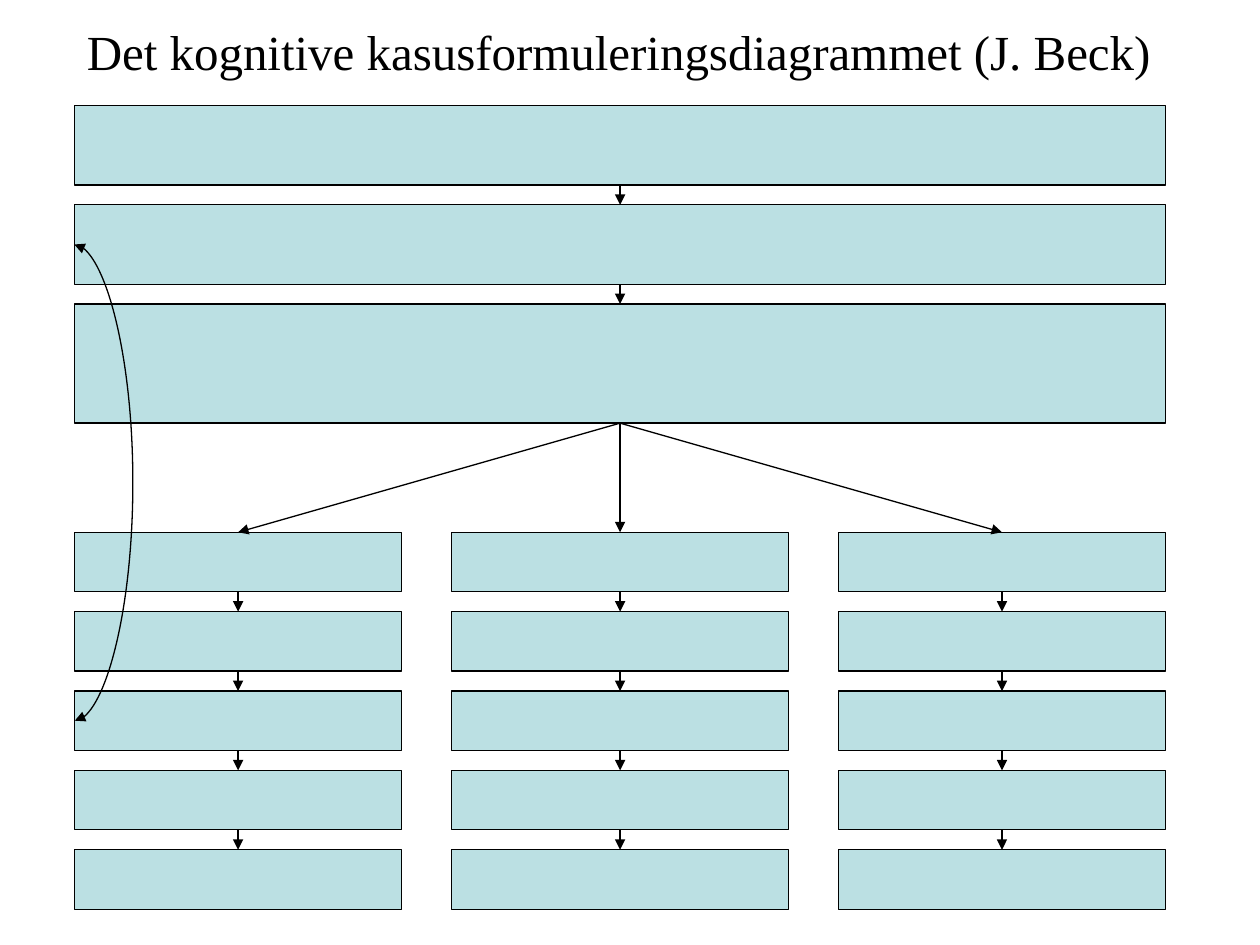
from itertools import pairwise

from lxml.etree import SubElement
from pptx import Presentation
from pptx.dml.color import RGBColor
from pptx.enum.shapes import MSO_CONNECTOR, MSO_SHAPE
from pptx.enum.text import MSO_AUTO_SIZE
from pptx.oxml.ns import qn
from pptx.util import Cm, Pt

TITLE = "Det kognitive kasusformuleringsdiagrammet (J. Beck)"
TITLE_FONT = {"name": "Times New Roman", "size": Pt(28)}
COLORS = {"box": "BBE0E3", "ink": "000000"}

# All lengths in cm
LEFT, TOP, FULL_WIDTH = 1.5, 2.13, 22
GAP = 0.4
BACKGROUND_HEIGHTS = [1.6, 1.6, 2.4]
SITUATION_COLUMNS = [(1.5, 6.6), (9.1, 6.8), (16.9, 6.6)]  # left, width
SITUATION_TOP, SITUATION_HEIGHT, SITUATION_ROWS = 10.73, 1.2, 5
BULGE = 1.17
SLIVER = 0.01  # a curved connector needs some width to scale its bulge
BOTTOM_SIDE, LEFT_SIDE, TOP_SIDE = 2, 1, 0

prs = Presentation()
prs.slide_width, prs.slide_height = Cm(25.4), Cm(19.05)
slide = prs.slides.add_slide(prs.slide_layouts[6])


def color(key):
    return RGBColor.from_string(COLORS[key])


def add_stack(left, top, width, heights):
    """Stack boxes downwards with equal gaps and return them."""
    stack = []
    for height in heights:
        box = slide.shapes.add_shape(
            MSO_SHAPE.RECTANGLE, Cm(left), Cm(top), Cm(width), Cm(height))
        box.shadow.inherit = False
        box.fill.solid()
        box.fill.fore_color.rgb = color("box")
        box.line.color.rgb = color("ink")
        box.line.width = Pt(0.75)
        stack.append(box)
        top += height + GAP
    return stack


def add_arrow(source, target, sides=(BOTTOM_SIDE, TOP_SIDE),
              kind=MSO_CONNECTOR.STRAIGHT, ends=("tailEnd",)):
    arrow = slide.shapes.add_connector(kind, 0, 0, 0, 0)
    arrow.begin_connect(source, sides[0])
    arrow.end_connect(target, sides[1])
    arrow.line.color.rgb = color("ink")
    arrow.line.width = Pt(0.75)
    for end in ends:
        SubElement(arrow.line._get_or_add_ln(), qn(f"a:{end}"), type="triangle")
    SubElement(arrow._element.spPr, qn("a:effectLst"))
    return arrow


background = add_stack(LEFT, TOP, FULL_WIDTH, BACKGROUND_HEIGHTS)
situations = [
    add_stack(left, SITUATION_TOP, width, [SITUATION_HEIGHT] * SITUATION_ROWS)
    for left, width in SITUATION_COLUMNS
]

for stack in [background, *situations]:
    for upper, lower in pairwise(stack):
        add_arrow(upper, lower)
for situation in situations:
    add_arrow(background[-1], situation[0])

feedback = add_arrow(situations[0][2], background[1], (LEFT_SIDE, LEFT_SIDE),
                     MSO_CONNECTOR.CURVE, ("headEnd", "tailEnd"))
feedback.width = Cm(SLIVER)
bend = feedback._element.spPr.find(qn("a:prstGeom")).get_or_add_avLst()
SubElement(bend, qn("a:gd"), name="adj1",
           fmla=f"val {round(-BULGE / SLIVER * 100000)}")

heading = slide.shapes.add_textbox(Cm(LEFT), Cm(0.3), Cm(22.6), Cm(1.44)).text_frame
heading.word_wrap = True
heading.auto_size = MSO_AUTO_SIZE.SHAPE_TO_FIT_TEXT
title = heading.paragraphs[0].add_run()
title.text = TITLE
for attribute, value in TITLE_FONT.items():
    setattr(title.font, attribute, value)
title.font.color.rgb = color("ink")

prs.save("out.pptx")
